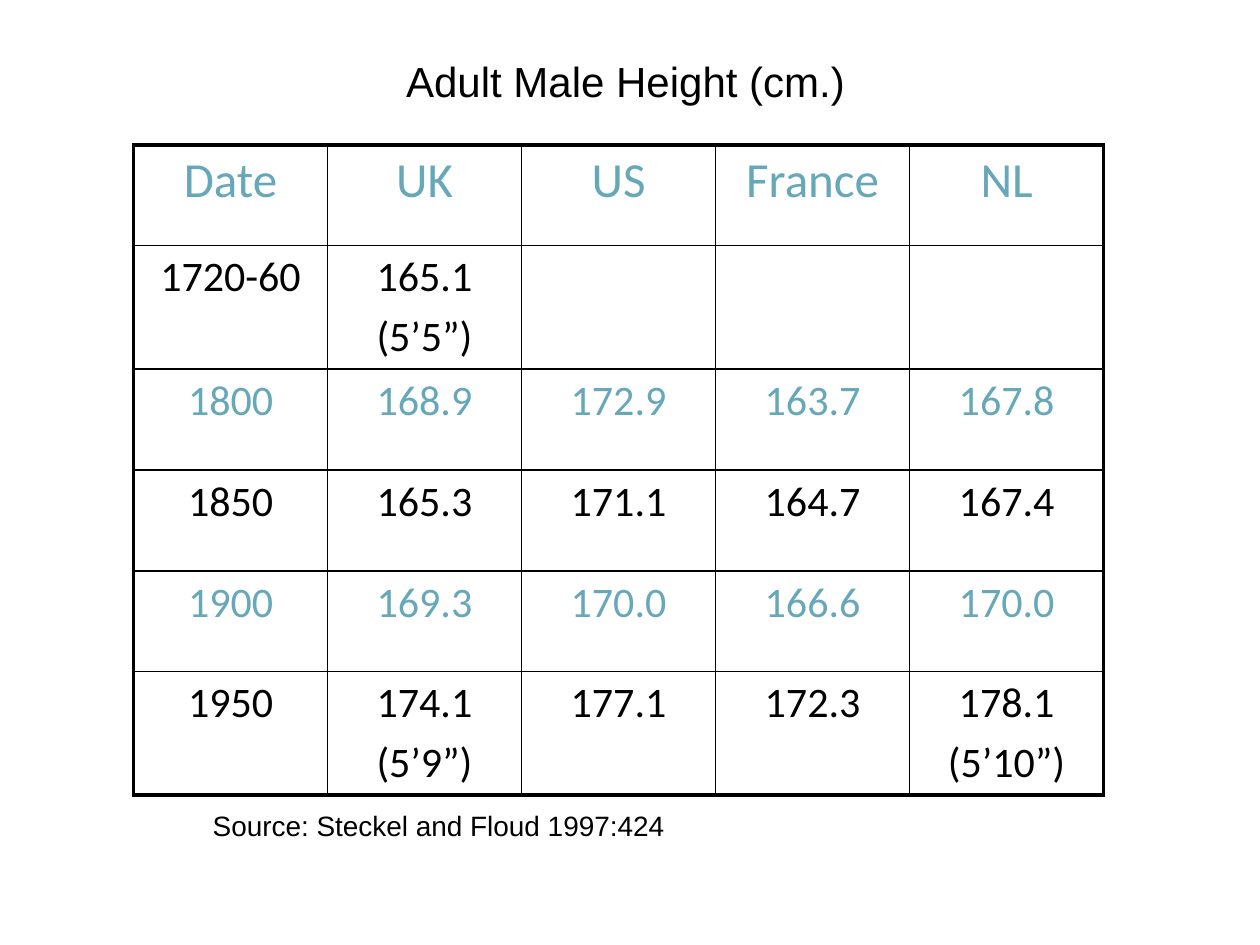
"""Build a slide with a table of adult male heights by country and date."""
import pptx
import pptx.util
import pptx.dml.color
import pptx.enum.text
import pptx.oxml
import lxml.etree

TITLE = "Adult Male Height (cm.)"
SOURCE = "Source: Steckel and Floud 1997:424"
ROWS = [
    ["Date", "UK", "US", "France", "NL"],
    ["1720-60", "165.1\n(5’5”)", "", "", ""],
    ["1800", "168.9", "172.9", "163.7", "167.8"],
    ["1850", "165.3", "171.1", "164.7", "167.4"],
    ["1900", "169.3", "170.0", "166.6", "170.0"],
    ["1950", "174.1\n(5’9”)", "177.1", "172.3", "178.1\n(5’10”)"],
]
THEME = {
    "ink": "000000", "tint": "66A7B9",
    "face": "Calibri", "plain": "Arial",
    "head": 28, "body": 24, "title": 24, "note": 16,
    "edge": 2.25, "rule": 1, "gap": 0.2,
}
WIDE, HIGH = 10, 7.5
LEFT, TOP, COL, ROW = 1.06, 1.15, 1.54, 0.8
INCH, PT = pptx.util.Inches, pptx.util.Pt
ALIGN = pptx.enum.text.PP_ALIGN


def write(frame, text, face, size, color, align, gap=0):
    """Fill a text frame, one paragraph a line."""
    frame.text = text
    for para in frame.paragraphs:
        para.alignment = align
        para.space_before = PT(size * gap)
        form = {"name": face, "size": PT(size)}
        for key, val in form.items():
            setattr(para.font, key, val)
        para.font.color.rgb = pptx.dml.color.RGBColor.from_string(color)


def label(slide, box, *style):
    """Add a wrapped text box."""
    frame = slide.shapes.add_textbox(*map(INCH, box)).text_frame
    form = {"word_wrap": True,
            "auto_size": pptx.enum.text.MSO_AUTO_SIZE.SHAPE_TO_FIT_TEXT}
    for key, val in form.items():
        setattr(frame, key, val)
    write(frame, *style)


def border(cell, sides):
    """Draw the cell's sides, heavy where the flag is true."""
    props = cell._tc.get_or_add_tcPr()
    space = pptx.oxml.ns.nsdecls("a")
    for spot, (side, heavy) in enumerate(sides.items()):
        width = PT(THEME["edge" if heavy else "rule"])
        props.insert(spot, pptx.oxml.parse_xml(
            f'<a:ln{side} {space} w="{width}"><a:solidFill>'
            f'<a:srgbClr val="{THEME["ink"]}"/></a:solidFill></a:ln{side}>'))


def grid(slide):
    """Add the table of heights."""
    rows, cols = len(ROWS), len(ROWS[0])
    box = LEFT, TOP, COL * cols, ROW * rows
    table = slide.shapes.add_table(rows, cols, *map(INCH, box)).table
    for flag in ("first_row", "horz_banding"):
        setattr(table, flag, False)
    for r, row in enumerate(ROWS):
        size = THEME["body" if r else "head"]
        color = THEME["ink" if r % 2 else "tint"]
        for c, text in enumerate(row):
            cell = table.cell(r, c)
            cell.fill.background()
            write(cell.text_frame, text, THEME["face"], size, color,
                  ALIGN.CENTER, THEME["gap"])
            border(cell, {"L": c == 0, "R": c == cols - 1,
                          "T": r == 0, "B": r == rows - 1})


def main():
    """Make and save the deck."""
    deck = pptx.Presentation()
    deck.slide_width, deck.slide_height = INCH(WIDE), INCH(HIGH)
    slide = deck.slides.add_slide(deck.slide_layouts[6])
    grid(slide)
    label(slide, (1.38, 0.39, 7.17, 0.5), TITLE, THEME["plain"],
          THEME["title"], THEME["ink"], ALIGN.CENTER)
    label(slide, (1.59, 6.37, 4.2, 0.37), SOURCE, THEME["plain"],
          THEME["note"], THEME["ink"], ALIGN.LEFT)
    deck.save("out.pptx")


if __name__ == "__main__":
    main()
